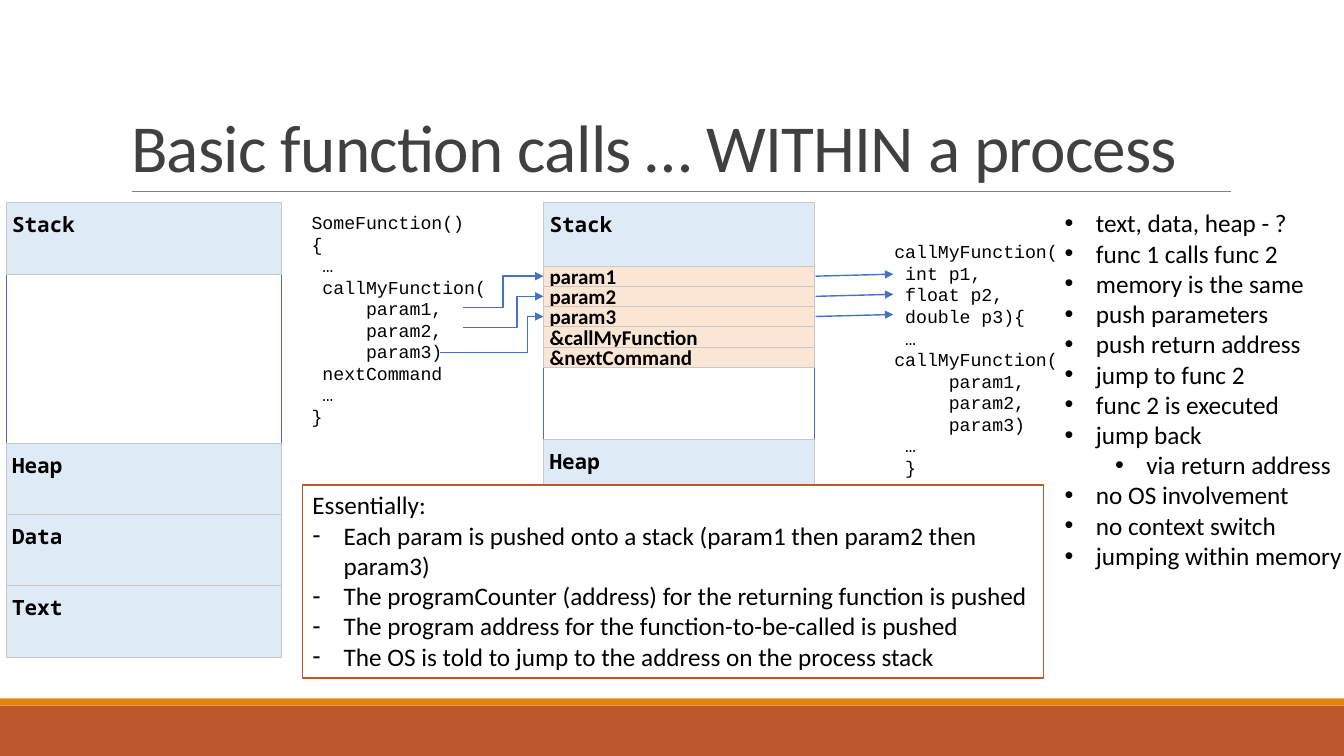
from lxml import etree
from pptx import Presentation
from pptx.dml.color import RGBColor
from pptx.enum.shapes import MSO_CONNECTOR, MSO_SHAPE
from pptx.enum.text import MSO_ANCHOR, MSO_AUTO_SIZE, PP_ALIGN
from pptx.oxml.ns import qn
from pptx.util import Inches, Pt

RECTANGLE = MSO_SHAPE.RECTANGLE
STRAIGHT, ELBOW = MSO_CONNECTOR.STRAIGHT, MSO_CONNECTOR.ELBOW
TOP, MIDDLE, BOTTOM = MSO_ANCHOR.TOP, MSO_ANCHOR.MIDDLE, MSO_ANCHOR.BOTTOM
LEFT, NO_FIT = PP_ALIGN.LEFT, MSO_AUTO_SIZE.NONE

THEME = {
    "colors": {
        "white": "FFFFFF", "black": "000000", "heading": "404040",
        "rust": "BD582C", "orange": "E48312", "rule": "808080",
        "blue": "4672C4", "region": "DEEBF6", "pushed": "FBE5D5", "edge": "C8C8C8",
    },
    "fonts": {
        "title": {"name": "Calibri", "size": Pt(48), "bold": False},
        "body": {"name": "Calibri", "size": Pt(18), "bold": False},
        "code": {"name": "Courier New", "size": Pt(13), "bold": False},
        "region": {"name": "Noto Sans Mono", "size": Pt(15), "bold": True},
        "pushed": {"name": "Calibri", "size": Pt(15), "bold": True},
    },
}
COLORS = {name: RGBColor.from_string(value) for name, value in THEME["colors"].items()}


def add_block(left, top, width, height, fill, line=None, weight=0.25):
    block = slide.shapes.add_shape(
        RECTANGLE, Inches(left), Inches(top), Inches(width), Inches(height))
    block.shadow.inherit = False
    block.fill.solid()
    block.fill.fore_color.rgb = COLORS[fill]
    if line:
        block.line.color.rgb = COLORS[line]
        block.line.width = Pt(weight)
    else:
        block.line.fill.background()
    return block


def write(frame, style, lines, color="black", anchor=TOP, margins=(0.1, 0.05), spacing=1.0):
    horizontal, vertical = (Inches(margin) for margin in margins)
    frame_format = {
        "word_wrap": True, "auto_size": NO_FIT, "vertical_anchor": anchor,
        "margin_left": horizontal, "margin_right": 0,
        "margin_top": vertical, "margin_bottom": 0,
    }
    for name, value in frame_format.items():
        setattr(frame, name, value)
    for index, line in enumerate(lines):
        paragraph = frame.add_paragraph() if index else frame.paragraphs[0]
        paragraph_format = {"alignment": LEFT, "line_spacing": spacing, "space_before": Pt(0)}
        for name, value in paragraph_format.items():
            setattr(paragraph, name, value)
        run = paragraph.add_run()
        run.text = line
        for name, value in THEME["fonts"][style].items():
            setattr(run.font, name, value)
        run.font.color.rgb = COLORS[color]


deck = Presentation()
deck.slide_width, deck.slide_height = Inches(13.33), Inches(7.5)
slide = deck.slides.add_slide(deck.slide_layouts[1])
title, call_steps = slide.placeholders

add_block(0, 7, 13.33, 0.5, "rust")
add_block(0, 6.93, 13.33, 0.07, "orange")

placements = ((title, (1.2, 0.31, 11, 1.59)), (call_steps, (10.46, 2.01, 2.87, 3.74)))
for placeholder, bounds in placements:
    for side, length in zip(("left", "top", "width", "height"), bounds):
        setattr(placeholder, side, Inches(length))

write(title.text_frame, "title", ["Basic function calls … WITHIN a process"],
      color="heading", anchor=BOTTOM, spacing=0.85)
title.text_frame.margin_bottom = Inches(0.05)
title.text_frame.paragraphs[0].runs[0].font._element.set("spc", "-50")

caller_code = [
    "SomeFunction()", "{", " …", " callMyFunction(", "     param1,", "     param2,",
    "     param3)", " nextCommand", " …", "}",
]
callee_code = [
    "callMyFunction(", " int p1,", " float p2,", " double p3){", " …", "callMyFunction(",
    "     param1,", "     param2,", "     param3)", " …", " }",
]
for left, top, code in ((3.09, 2.1, caller_code), (8.87, 2.39, callee_code)):
    listing = slide.shapes.add_textbox(
        Inches(left), Inches(top), Inches(1.75), Inches(0.22 * len(code)))
    write(listing.text_frame, "code", code, margins=(0, 0), spacing=Pt(15.4))

process_memory = (0.06, 2.01, 2.73, 4.51, 0.71,
                  (("Stack", 2.01), ("Heap", 4.4), ("Data", 5.1), ("Text", 5.81)))
call_memory = (5.39, 2.04, 2.69, 4.44, 0.7, (("Stack", 2.01), ("Heap", 4.36)))
for left, top, width, height, region_height, regions in (process_memory, call_memory):
    add_block(left, top, width, height, "white", "blue")
    for label, region_top in regions:
        region = add_block(left, region_top, width, region_height, "region", "edge")
        write(region.text_frame, "region", [label], margins=(0.06, 0.09))

pushed_values = ["param1", "param2", "param3", "&callMyFunction", "&nextCommand"]
for row, label in enumerate(pushed_values):
    pushed = add_block(5.39, 2.64 + 0.2 * row, 2.69, 0.2, "pushed", "edge")
    write(pushed.text_frame, "pushed", [label], anchor=MIDDLE, margins=(0.06, 0))

lines = [(STRAIGHT, 1.31, 1.9, 12.21, 1.9, None)]
argument_starts = ((4.59, 3.05, 4.99), (4.59, 3.25, 5.13), (4.36, 3.5, 5.23))
for row, (start_x, start_y, bend_x) in enumerate(argument_starts):
    param_y = 2.74 + 0.2 * row
    lines.append((ELBOW, start_x, start_y, 5.39, param_y, bend_x))
    lines.append((STRAIGHT, 8.09, param_y, 8.86, param_y - 0.02, None))
for kind, start_x, start_y, end_x, end_y, bend_x in lines:
    line = slide.shapes.add_connector(
        kind, Inches(start_x), Inches(start_y), Inches(end_x), Inches(end_y))
    is_rule = start_y == 1.9
    line.line.color.rgb = COLORS["rule" if is_rule else "blue"]
    line.line.width = Pt(0.5 if is_rule else 1)
    properties = line._element.spPr
    if not is_rule:
        etree.SubElement(properties.find(qn("a:ln")), qn("a:tailEnd"), type="triangle")
    etree.SubElement(properties, qn("a:effectLst"))
    if bend_x:
        bend = round(100000 * (bend_x - start_x) / (end_x - start_x))
        adjustments = properties.find(qn("a:prstGeom")).find(qn("a:avLst"))
        etree.SubElement(adjustments, qn("a:gd"), name="adj1", fmla=f"val {bend}")

summary = add_block(3, 4.81, 7.35, 1.92, "white", "rust", 1.25)
write(summary.text_frame, "body", [
    "Essentially:",
    "Each param is pushed onto a stack (param1 then param2 then param3)",
    "The programCounter (address) for the returning function is pushed",
    "The program address for the function-to-be-called is pushed",
    "The OS is told to jump to the address on the process stack",
])
write(call_steps.text_frame, "body", [
    "text, data, heap - ?", "func 1 calls func 2", "memory is the same",
    "push parameters", "push return address", "jump to func 2",
    "func 2 is executed", "jump back", "via return address",
    "no OS involvement", "no context switch", "jumping within memory",
])
call_steps.text_frame.paragraphs[8].level = 1

bulleted = [("-", item) for item in summary.text_frame.paragraphs[1:]]
bulleted += [("•", item) for item in call_steps.text_frame.paragraphs]
for mark, item in bulleted:
    properties = item._p.get_or_add_pPr()
    properties.set("marL", str(Inches(0.31 + 0.5 * item.level)))
    properties.set("indent", str(Inches(-0.31)))
    etree.SubElement(properties, qn("a:buFont"), typeface="Arial")
    etree.SubElement(properties, qn("a:buChar"), char=mark)

deck.save("out.pptx")
